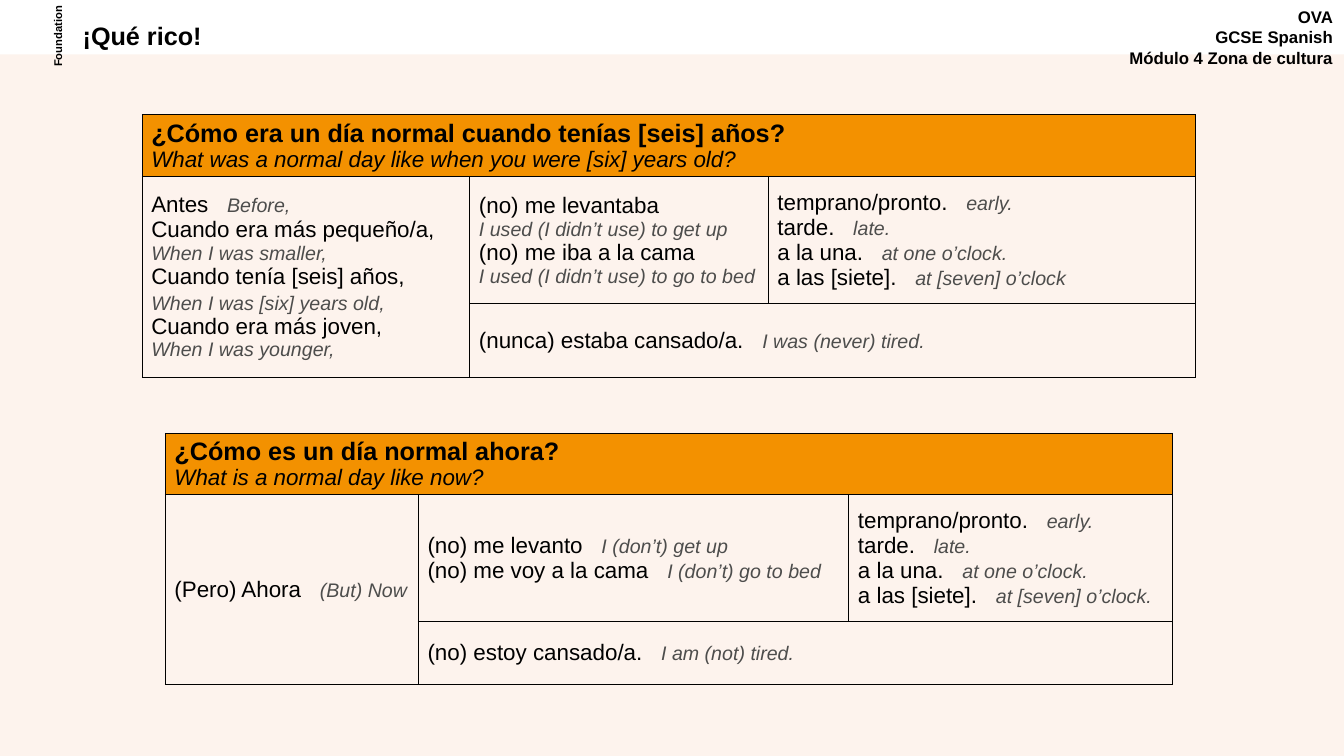
"""Builds a Spanish vocabulary slide about daily routines, past and present."""
from dataclasses import dataclass
from typing import Any

from lxml import etree
from pptx import Presentation
from pptx.dml.color import RGBColor
from pptx.enum.shapes import MSO_SHAPE
from pptx.enum.text import MSO_ANCHOR, MSO_AUTO_SIZE, PP_ALIGN
from pptx.oxml.ns import qn
from pptx.util import Inches, Pt

RECTANGLE = MSO_SHAPE.RECTANGLE
TOP, MIDDLE = MSO_ANCHOR.TOP, MSO_ANCHOR.MIDDLE
LEFT, CENTER, RIGHT = PP_ALIGN.LEFT, PP_ALIGN.CENTER, PP_ALIGN.RIGHT
NO_AUTOFIT = MSO_AUTO_SIZE.NONE
WIDTH, HEIGHT = Inches(13.33), Inches(7.5)
TITLE_ONLY = 5


@dataclass(frozen=True)
class Style:
    size: float
    color: str
    bold: bool = False
    italic: bool = False


@dataclass(frozen=True)
class Theme:
    font: str = "Arial"
    ink: str = "000000"
    paper: str = "FDF3ED"
    heading_fill: str = "F39100"
    border: float = 0.75
    gloss_gap: float = 8.9
    title: Style = Style(18, "000000", bold=True)
    course: Style = Style(12, "000000", bold=True)
    tier: Style = Style(8, "000000", bold=True)
    question: Style = Style(18, "000000", bold=True)
    question_gloss: Style = Style(16, "000000", italic=True)
    phrase: Style = Style(16, "000000")
    phrase_gloss: Style = Style(14, "4D4D4C", italic=True)


@dataclass(frozen=True)
class Area:
    """Left, top, width and height in percent of the slide."""
    left: float
    top: float
    width: float
    height: float


@dataclass(frozen=True)
class Line:
    phrase: str = ""
    gloss: str = ""
    lead: float = 0


@dataclass(frozen=True)
class Entry:
    row: int
    column: int
    lines: tuple[Line, ...]
    rows: int = 1
    columns: int = 1
    heading: bool = False


@dataclass(frozen=True)
class Grid:
    left: float
    top: float
    columns: tuple[float, ...]
    rows: tuple[float, ...]
    entries: tuple[Entry, ...]


THEME = Theme()
TIMES = (Line("temprano/pronto.", "early."), Line("tarde.", "late."),
         Line("a la una.", "at one o’clock."))

PAST = Grid(10.58, 15.2, (24.38, 22.21, 31.81), (8.2, 16.8, 9.67), (
    Entry(0, 0, (Line("¿Cómo era un día normal cuando tenías [seis] años?"),
                 Line(gloss="What was a normal day like when you were [six] years old?")),
          columns=3, heading=True),
    Entry(1, 0, (Line("Antes", "Before,"),
                 Line("Cuando era más pequeño/a,"), Line(gloss="When I was smaller,"),
                 Line("Cuando tenía [seis] años,"),
                 Line(gloss="When I was [six] years old,", lead=2),
                 Line("Cuando era más joven,"), Line(gloss="When I was younger,")), rows=2),
    Entry(1, 1, (Line("(no) me levantaba"), Line(gloss="I used (I didn’t use) to get up"),
                 Line("(no) me iba a la cama"),
                 Line(gloss="I used (I didn’t use) to go to bed"))),
    Entry(1, 2, (*TIMES, Line("a las [siete].", "at [seven] o’clock"))),
    Entry(2, 1, (Line("(nunca) estaba cansado/a.", "I was (never) tired."),), columns=2),
))

PRESENT = Grid(12.3, 57.33, (18.83, 32.03, 24.08), (8.13, 16.8, 8.27), (
    Entry(0, 0, (Line("¿Cómo es un día normal ahora?"),
                 Line(gloss="What is a normal day like now?")), columns=3, heading=True),
    Entry(1, 0, (Line("(Pero) Ahora", "(But) Now"),), rows=2),
    Entry(1, 1, (Line("(no) me levanto", "I (don’t) get up"),
                 Line("(no) me voy a la cama", "I (don’t) go to bed"))),
    Entry(1, 2, (*TIMES, Line("a las [siete].", "at [seven] o’clock."))),
    Entry(2, 1, (Line("(no) estoy cansado/a.", "I am (not) tired."),), columns=2),
))


def across(percent: float) -> int:
    return round(WIDTH * percent / 100)


def down(percent: float) -> int:
    return round(HEIGHT * percent / 100)


def place(area: Area) -> dict[str, int]:
    return {"left": across(area.left), "top": down(area.top),
            "width": across(area.width), "height": down(area.height)}


def apply(target: Any, formats: dict[str, Any]) -> None:
    for attribute, value in formats.items():
        setattr(target, attribute, value)


def add_run(paragraph: Any, words: str, style: Style) -> Any:
    run = paragraph.add_run()
    run.text = words
    apply(run.font, {"name": THEME.font, "size": Pt(style.size),
                     "bold": style.bold, "italic": style.italic})
    run.font.color.rgb = RGBColor.from_string(style.color)
    return run


def write_label(label: Any, lines: tuple[str, ...], style: Style, formats: dict[str, Any]) -> None:
    frame = label.text_frame
    apply(frame, {"word_wrap": True, "auto_size": NO_AUTOFIT, "vertical_anchor": TOP})
    for number, words in enumerate(lines):
        paragraph = frame.add_paragraph() if number else frame.paragraphs[0]
        apply(paragraph, formats)
        add_run(paragraph, words, style)


def write_entry(cell: Any, entry: Entry) -> None:
    phrase_style = THEME.question if entry.heading else THEME.phrase
    gloss_style = THEME.question_gloss if entry.heading else THEME.phrase_gloss
    for number, line in enumerate(entry.lines):
        paragraph = cell.text_frame.add_paragraph() if number else cell.text_frame.paragraphs[0]
        if line.lead:
            paragraph.space_before = Pt(line.lead)
        if line.phrase:
            add_run(paragraph, line.phrase, phrase_style)
        if line.phrase and line.gloss:
            gap = add_run(paragraph, " ", phrase_style)
            gap.font._element.set("spc", str(round(THEME.gloss_gap * 100)))
        if line.gloss:
            add_run(paragraph, line.gloss, gloss_style)


def outline_cell(cell: Any) -> None:
    properties = cell._tc.get_or_add_tcPr()
    for side in ("a:lnL", "a:lnR", "a:lnT", "a:lnB"):
        edge = etree.SubElement(properties, qn(side), w=str(Pt(THEME.border)))
        fill = etree.SubElement(edge, qn("a:solidFill"))
        etree.SubElement(fill, qn("a:srgbClr"), val=THEME.ink)


def draw_grid(slide: Any, grid: Grid) -> None:
    area = Area(grid.left, grid.top, sum(grid.columns), sum(grid.rows))
    table = slide.shapes.add_table(len(grid.rows), len(grid.columns), **place(area)).table
    apply(table, {"first_row": False, "horz_banding": False})
    for column, share in zip(table.columns, grid.columns):
        column.width = across(share)
    for row, share in zip(table.rows, grid.rows):
        row.height = down(share)
    for cell in table.iter_cells():
        outline_cell(cell)
        cell.fill.background()
        apply(cell, {"vertical_anchor": MIDDLE, "margin_left": across(0.68),
                     "margin_right": across(0.68), "margin_top": down(0.53),
                     "margin_bottom": down(0.53)})
    for entry in grid.entries:
        cell = table.cell(entry.row, entry.column)
        if entry.rows * entry.columns > 1:
            cell.merge(table.cell(entry.row + entry.rows - 1, entry.column + entry.columns - 1))
        if entry.heading:
            cell.fill.solid()
            cell.fill.fore_color.rgb = RGBColor.from_string(THEME.heading_fill)
        write_entry(cell, entry)


def main() -> None:
    deck = Presentation()
    apply(deck, {"slide_width": WIDTH, "slide_height": HEIGHT})
    slide = deck.slides.add_slide(deck.slide_layouts[TITLE_ONLY])

    page = slide.shapes.add_shape(RECTANGLE, **place(Area(0, 7.2, 100, 92.8)))
    page.shadow.inherit = False
    page.fill.solid()
    page.fill.fore_color.rgb = RGBColor.from_string(THEME.paper)
    page.line.fill.background()
    slide.shapes._spTree.insert(2, page._element)

    title = slide.shapes.title
    apply(title, place(Area(5.4, 2.53, 51.61, 5.73)))
    write_label(title, ("¡Qué rico!",), THEME.title, {"alignment": LEFT, "line_spacing": 0.9})

    course = slide.shapes.add_textbox(**place(Area(77.49, 0.27, 22.43, 10.27)))
    write_label(course, ("OVA", "GCSE Spanish", "Módulo 4 Zona de cultura"),
                THEME.course, {"alignment": RIGHT})

    tier = slide.shapes.add_textbox(**place(Area(1.13, 3.07, 6.53, 3.47)))
    tier.rotation = 270
    write_label(tier, ("Foundation",), THEME.tier, {"alignment": CENTER})

    for grid in (PAST, PRESENT):
        draw_grid(slide, grid)
    deck.save("out.pptx")


if __name__ == "__main__":
    main()
